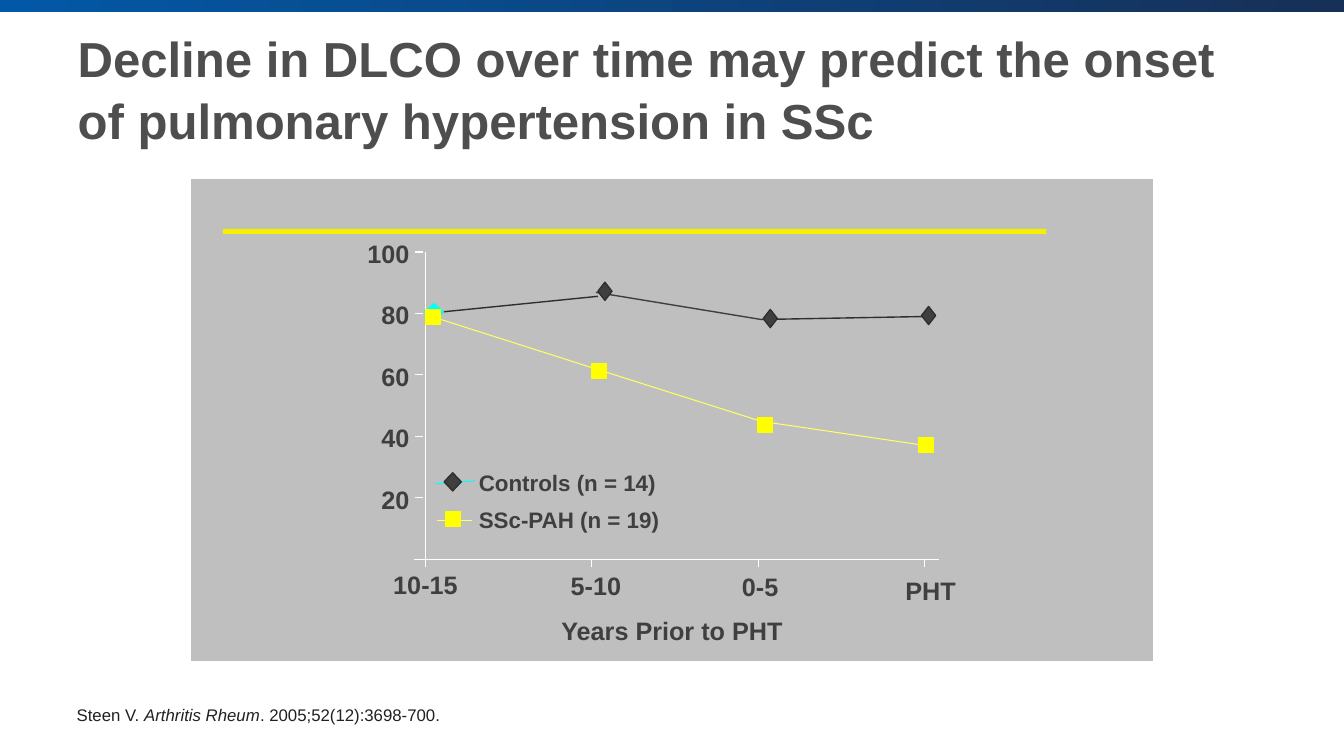
from lxml import etree
from pptx import Presentation
from pptx import util as u
from pptx.dml.color import RGBColor
from pptx.enum import shapes, text
from pptx.oxml import ns

color = RGBColor.from_string
inch = u.Inches
ALIGN = text.PP_ALIGN
SHAPE = shapes.MSO_SHAPE
WHITE, DARK, EDGE = "FFFFFF", "3F3F3F", "2F2F2F"
YELLOW, PALE, CYAN = "FFFF00", "FFFF66", "00FFFF"
WIDTH, HEIGHT = 13.33, 7.5
AXIS_X, AXIS_Y = 4.22, 5.55
COLUMN, ROW = 1.65, 0.61

deck = Presentation()
deck.slide_width, deck.slide_height = inch(WIDTH), inch(HEIGHT)
page = deck.slides.add_slide(deck.slide_layouts[6])


def add_block(kind, left, top, width, height, fill, edge=None, weight=0.75):
    block = page.shapes.add_shape(kind, inch(left), inch(top), inch(width), inch(height))
    block.shadow.inherit = False
    if fill:
        block.fill.solid()
        block.fill.fore_color.rgb = color(fill)
    if edge:
        block.line.color.rgb = color(edge)
        block.line.width = u.Pt(weight)
    else:
        block.line.fill.background()
    return block


def add_text(left, top, width, height, runs, size, ink=DARK, bold=True, align=ALIGN.LEFT):
    box = page.shapes.add_textbox(inch(left), inch(top), inch(width), inch(height))
    frame = box.text_frame
    frame.word_wrap = True
    frame.vertical_anchor = text.MSO_ANCHOR.MIDDLE
    frame.margin_left = frame.margin_right = frame.margin_top = frame.margin_bottom = 0
    para = frame.paragraphs[0]
    para.alignment = align
    for words, italic in runs:
        span = para.add_run()
        span.text = words
        span.font.name, span.font.size = "Arial", u.Pt(size)
        span.font.bold, span.font.italic = bold, italic
        span.font.color.rgb = color(ink)
    return para


banner = add_block(SHAPE.RECTANGLE, 0, 0, WIDTH, 0.12, None)
banner.fill.gradient()
banner.fill.gradient_angle = 0
for stop, shade in zip(banner.fill.gradient_stops, ("0258A6", "173057")):
    stop.color.rgb = color(shade)

add_block(SHAPE.RECTANGLE, 1.89, 1.77, 9.55, 4.8, "BFBFBF", WHITE, 1)
title = add_text(0.77, 0.22, 11.55, 1.3, [(
    "Decline in DLCO over time may predict the onset of pulmonary hypertension in SSc",
    False)], 35.1, "4D4E4D")
title.line_spacing = 1.04

lines = [
    (AXIS_X, AXIS_Y - 5 * ROW, AXIS_X, AXIS_Y, WHITE, 0.75),
    (4.11, AXIS_Y, 9.31, AXIS_Y, WHITE, 0.75),
    (4.32, 4.8, 4.71, 4.77, CYAN, 0.75),
    (4.33, 5.16, 4.68, 5.16, PALE, 0.75),
    (4.33, 3.1, 5.93, 2.94, EDGE, 1),
    (5.91, 2.9, 7.55, 3.17, DARK, 1),
    (7.55, 3.17, 9.18, 3.14, EDGE, 1),
]
for step in range(6):
    tick_y = AXIS_Y - step * ROW
    lines.append((4.12, tick_y, 4.2, tick_y, WHITE, 0.75))
for step in range(4):
    tick_x = AXIS_X + step * COLUMN
    lines.append((tick_x, AXIS_Y + 0.08, tick_x, AXIS_Y, WHITE, 0.75))
patient_points = [(4.28, 3.14), (5.91, 3.66), (7.55, 4.18), (9.18, 4.42)]
for start, end in zip(patient_points, patient_points[1:]):
    lines.append((*start, *end, PALE, 0.75))

for x1, y1, x2, y2, ink, weight in lines:
    line = page.shapes.add_connector(
        shapes.MSO_CONNECTOR.STRAIGHT, inch(x1), inch(y1), inch(x2), inch(y2))
    line.line.color.rgb = color(ink)
    line.line.width = u.Pt(weight)
    etree.SubElement(line.element.spPr, ns.qn("a:effectLst"))

add_block(SHAPE.DIAMOND, 4.21, 3.01, 0.19, 0.17, CYAN, CYAN)
for center_x, center_y, width in (
        (6, 2.89, 0.14), (7.64, 3.16, 0.14), (9.21, 3.13, 0.14), (4.49, 4.78, 0.17)):
    add_block(SHAPE.DIAMOND, center_x - width / 2, center_y - 0.09, width, 0.18, DARK, EDGE, 1)
for left, top in ((4.22, 3.07), (5.87, 3.61), (7.51, 4.14), (9.11, 4.34), (4.42, 5.07)):
    add_block(SHAPE.RECTANGLE, left, top, 0.15, 0.15, YELLOW, YELLOW)

for step in range(1, 6):
    add_text(3.56, AXIS_Y - step * ROW - 0.14, 0.5, 0.3,
             [(str(20 * step), False)], 18, align=ALIGN.RIGHT)
for period, center_x, top in (
        ("10-15", 4.22, 5.65), ("5-10", 5.91, 5.66), ("0-5", 7.54, 5.67), ("PHT", 9.23, 5.71)):
    add_text(center_x - 0.5, top, 1, 0.3, [(period, False)], 18, align=ALIGN.CENTER)
for group, top in (("Controls (n = 14)", 4.65), ("SSc-PAH (n = 19)", 5.02)):
    add_text(4.75, top, 2, 0.27, [(group, False)], 16)

add_block(SHAPE.RECTANGLE, 2.21, 2.27, 8.17, 0.05, "F6F000")
add_text(4.33, 6.1, 4.67, 0.3, [("Years Prior to PHT", False)], 18, align=ALIGN.CENTER)
add_text(0.76, 6.99, 3.88, 0.2, [
    ("Steen V. ", False), ("Arthritis Rheum", True), (". 2005;52(12):3698-700.", False),
], 12, "212121", False)

deck.save("out.pptx")
